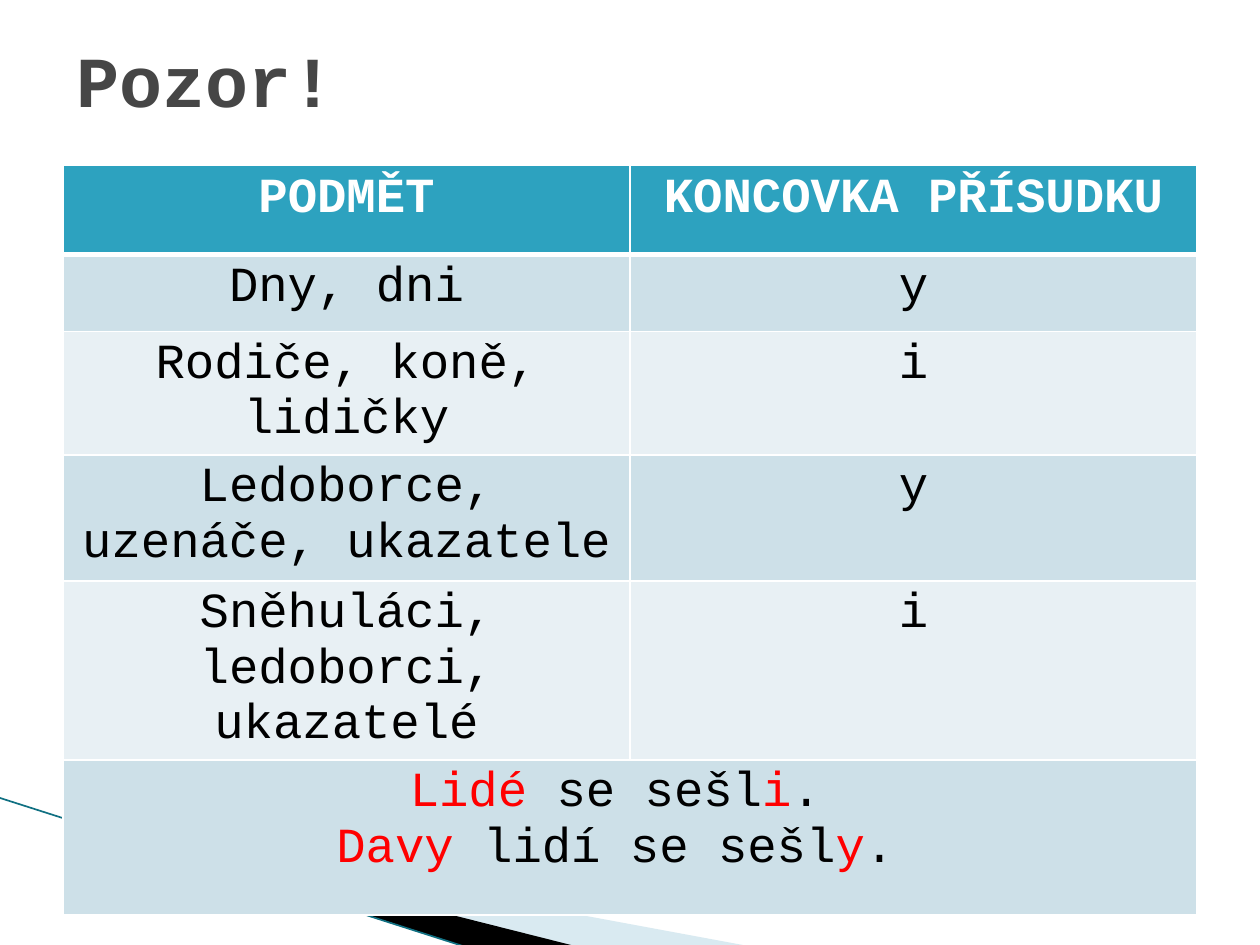
from typing import NamedTuple

from lxml import etree
from pptx import Presentation
from pptx import util as u
from pptx.dml.color import RGBColor
from pptx.enum import shapes, text
from pptx.oxml import ns

FONT = "Courier New"
BLACK, WHITE, RED = "000000", "FFFFFF", "FF0000"
HEAD, DARK, LIGHT = "2DA2BF", "CDE0E8", "E8F0F4"


class Run(NamedTuple):
    text: str
    tint: str = BLACK
    bold: bool = False
    size: float = 28


class Wedge(NamedTuple):
    points: list[tuple[float, float]]
    tint: str
    alpha: int


class Row(NamedTuple):
    high: float
    fill: str
    cells: list[list[list[Run]]]


def paint(item, tint: str) -> None:
    item.solid()
    item.fore_color.rgb = RGBColor.from_string(tint)


def write(frame, paras: list[list[Run]], align) -> None:
    for n, runs in enumerate(paras):
        para = frame.paragraphs[0] if n == 0 else frame.add_paragraph()
        para.alignment = align
        for run in runs:
            part = para.add_run()
            part.text = run.text
            part.font.name = FONT
            part.font.size = u.Pt(run.size)
            part.font.bold = run.bold
            paint(part.font.fill, run.tint)


def edge(cell, base: float) -> None:
    props = cell._tc.get_or_add_tcPr()
    sides = {"lnL": 1, "lnR": 1, "lnT": 1, "lnB": base}
    for n, (side, width) in enumerate(sides.items()):
        line = etree.Element(ns.qn(f"a:{side}"), w=str(u.Pt(width)))
        fill = etree.SubElement(line, ns.qn("a:solidFill"))
        etree.SubElement(fill, ns.qn("a:srgbClr"), val=WHITE)
        props.insert(n, line)


def draw_wedge(slide, wedge: Wedge) -> None:
    spots = [(u.Inches(x), u.Inches(y)) for x, y in wedge.points]
    form = slide.shapes.build_freeform(*spots[0])
    form.add_line_segments(spots[1:], close=True)
    shape = form.convert_to_shape()
    shape.shadow.inherit = False
    shape.line.fill.background()
    paint(shape.fill, wedge.tint)
    tone = shape.fill._xPr.find(".//" + ns.qn("a:srgbClr"))
    etree.SubElement(tone, ns.qn("a:alpha"), val=str(wedge.alpha * 1000))


def draw_line(slide) -> None:
    line = slide.shapes.add_connector(
        shapes.MSO_CONNECTOR.STRAIGHT,
        u.Inches(-0.01), u.Inches(6.33), u.Inches(3.71), u.Inches(7.52))
    line.line.width = u.Pt(0.95)
    paint(line.line.fill, "107082")
    etree.SubElement(line._element.spPr, ns.qn("a:effectLst"))


def draw_table(slide, rows: list[Row]) -> None:
    high = sum(row.high for row in rows)
    table = slide.shapes.add_table(
        len(rows), 2, u.Inches(0.5), u.Inches(1.31),
        u.Inches(9), u.Inches(high)).table
    table.first_row = table.horz_banding = False
    for r, row in enumerate(rows):
        table.rows[r].height = u.Inches(row.high)
        for c in range(2):
            cell = table.cell(r, c)
            paint(cell.fill, row.fill)
            edge(cell, 3 if r == 0 else 1)
        for c, paras in enumerate(row.cells):
            write(table.cell(r, c).text_frame, paras, text.PP_ALIGN.CENTER)
        if len(row.cells) == 1:
            table.cell(r, 0).merge(table.cell(r, 1))


def draw_title(slide) -> None:
    box = slide.shapes.add_textbox(
        u.Inches(0.51), 0, u.Inches(9), u.Inches(1.25))
    frame = box.text_frame
    frame.word_wrap = True
    frame.vertical_anchor = text.MSO_ANCHOR.MIDDLE
    write(frame, [[Run("Pozor!", "464646", True, 41)]], text.PP_ALIGN.LEFT)


def pair(high: float, fill: str, left: str, right: str) -> Row:
    return Row(high, fill, [[[Run(left)]], [[Run(right)]]])


WEDGES = [
    Wedge([(0.55, 6.51), (5.95, 7.51), (4.56, 7.51), (0.55, 6.5)],
          "A0CBDC", 40),
    Wedge([(0.53, 6.49), (4.57, 7.51), (3.72, 7.52), (0.54, 6.5)],
          BLACK, 100),
]
ROWS = [
    Row(0.71, HEAD, [[[Run("PODMĚT", WHITE, True)]],
                     [[Run("KONCOVKA PŘÍSUDKU", WHITE, True)]]]),
    pair(0.61, DARK, "Dny, dni", "y"),
    pair(0.61, LIGHT, "Rodiče, koně, lidičky", "i"),
    pair(1, DARK, "Ledoborce, uzenáče, ukazatele", "y"),
    pair(1, LIGHT, "Sněhuláci, ledoborci, ukazatelé", "i"),
    Row(1.23, DARK, [[
        [Run("Lidé ", RED), Run("se sešl"), Run("i", RED), Run(". ")],
        [Run("Davy", RED), Run(" lidí se sešl"), Run("y", RED), Run(". ")],
    ]]),
]


def main() -> None:
    deck = Presentation()
    deck.slide_width, deck.slide_height = u.Inches(10), u.Inches(7.5)
    slide = deck.slides.add_slide(deck.slide_layouts[6])
    for wedge in WEDGES:
        draw_wedge(slide, wedge)
    draw_line(slide)
    draw_table(slide, ROWS)
    draw_title(slide)
    deck.save("out.pptx")


if __name__ == "__main__":
    main()
